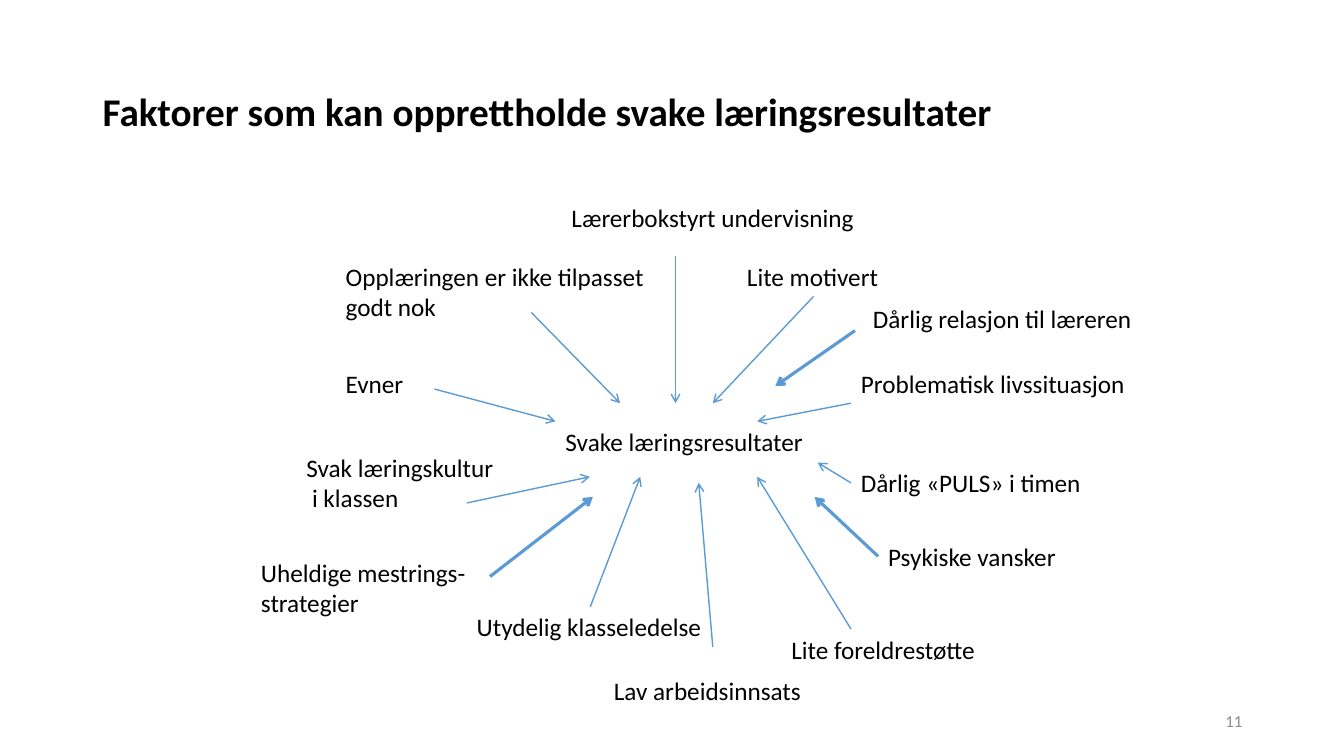
from dataclasses import dataclass

from lxml.etree import SubElement as Sub
from pptx import Presentation
from pptx.dml.color import RGBColor as Rgb
from pptx.enum.shapes import MSO_CONNECTOR as Conn
from pptx.enum.text import MSO_ANCHOR as Anchor, MSO_AUTO_SIZE as Fit, PP_ALIGN as Align
from pptx.oxml.ns import qn
from pptx.shapes.autoshape import Shape
from pptx.slide import Slide
from pptx.util import Inches, Pt

COLORS = {"text": "000000", "arrow": "5B9BD5", "number": "8C8C8C"}
FONT = "Calibri"
TOP, LEFT, BOTTOM = 0, 1, 2  # connection sites
THIN, THICK = 1, 2.25


@dataclass
class Label:
    lines: list[str]
    x: float
    y: float
    w: float
    h: float = 0.4
    size: float = 18
    color: str = "text"
    bold: bool = False
    wrap: bool = False
    grow: bool = True
    anchor: Anchor = Anchor.TOP
    align: Align = Align.LEFT
    space: float = 1


@dataclass
class Arrow:
    start: tuple[float, float]
    end: tuple[float, float]
    width: float = THIN
    site: int | None = None  # side of the label where the arrow begins


@dataclass
class Factor:
    label: Label
    arrow: Arrow


TITLE = Label(["Faktorer som kan opprettholde svake læringsresultater"],
              0.92, 0.4, 11.5, 1.45, size=28, bold=True, wrap=True,
              grow=False, anchor=Anchor.MIDDLE, space=0.9)
CENTER = Label(["Svake læringsresultater"], 5.51, 4.18, 2.61)
NUMBER = Label(["11"], 9.42, 6.95, 3, size=12, color="number", wrap=True,
               grow=False, anchor=Anchor.MIDDLE, align=Align.RIGHT)

# Factors, clockwise from the top
FACTORS = [
    Factor(Label(["Lærerbokstyrt undervisning"], 5.57, 1.96, 3.03),
           Arrow((6.7, 2.54), (6.7, 4))),
    Factor(Label(["Lite motivert"], 7.31, 2.54, 1.52),
           Arrow((8.07, 2.94), (7.07, 4), site=BOTTOM)),
    Factor(Label(["Dårlig relasjon til læreren"], 8.56, 2.96, 2.8),
           Arrow((8.48, 3.28), (7.69, 3.83), THICK)),
    Factor(Label(["Problematisk livssituasjon"], 8.44, 3.6, 2.85, 0.71),
           Arrow((8.44, 4), (7.51, 4.18))),
    Factor(Label(["Dårlig «PULS» i timen"], 8.44, 4.59, 2.47),
           Arrow((8.44, 4.79), (8.11, 4.59), site=LEFT)),
    Factor(Label(["Psykiske vansker"], 8.71, 5.32, 1.88),
           Arrow((8.71, 5.53), (8.08, 4.93), THICK, LEFT)),
    Factor(Label(["Lite foreldrestøtte"], 7.75, 6.24, 2.06),
           Arrow((8.44, 6.24), (7.51, 4.73))),
    Factor(Label(["Lav arbeidsinnsats"], 5.99, 6.65, 2.08),
           Arrow((7.07, 6.42), (6.93, 4.79))),
    Factor(Label(["Utydelig klasseledelse"], 4.63, 6.02, 2.45),
           Arrow((5.85, 6.02), (6.35, 4.73), site=TOP)),
    Factor(Label(["Uheldige mestrings- strategier"], 2.49, 5.48, 2.6, 0.71, wrap=True),
           Arrow((4.86, 5.72), (5.88, 4.93), THICK)),
    Factor(Label(["Svak læringskultur", " i klassen"], 2.94, 4.44, 2.08, 0.71),
           Arrow((4.63, 4.99), (5.85, 4.73))),
    Factor(Label(["Evner"], 3.33, 3.6, 0.84),
           Arrow((4.31, 3.86), (5.51, 4.18))),
    Factor(Label(["Opplæringen er ikke tilpasset", "godt nok"], 3.33, 2.54, 3.2, 0.71),
           Arrow((5.27, 3.1), (6.15, 4))),
]


def add_label(slide: Slide, label: Label) -> Shape:
    box = slide.shapes.add_textbox(Inches(label.x), Inches(label.y),
                                   Inches(label.w), Inches(label.h))
    frame = box.text_frame
    frame.word_wrap = label.wrap
    frame.auto_size = Fit.SHAPE_TO_FIT_TEXT if label.grow else Fit.NONE
    frame.vertical_anchor = label.anchor
    for i, line in enumerate(label.lines):
        para = frame.add_paragraph() if i else frame.paragraphs[0]
        para.alignment = label.align
        para.line_spacing = label.space
        run = para.add_run()
        run.text = line
        run.font.name = FONT
        run.font.size = Pt(label.size)
        run.font.bold = label.bold
        run.font.color.rgb = Rgb.from_string(COLORS[label.color])
    return box


def add_arrow(slide: Slide, arrow: Arrow, box: Shape) -> None:
    ends = [Inches(v) for v in (*arrow.start, *arrow.end)]
    line = slide.shapes.add_connector(Conn.STRAIGHT, *ends)
    if arrow.site is not None:
        line.begin_connect(box, arrow.site)
    line.line.width = Pt(arrow.width)
    line.line.color.rgb = Rgb.from_string(COLORS["arrow"])
    # Arrowhead, and no shadow
    Sub(line.line._get_or_add_ln(), qn("a:tailEnd"), type="arrow")
    Sub(line._element.spPr, qn("a:effectLst"))


def main() -> None:
    deck = Presentation()
    deck.slide_width, deck.slide_height = Inches(13.33), Inches(7.5)
    slide = deck.slides.add_slide(deck.slide_layouts[6])
    for label in (TITLE, CENTER, NUMBER):
        add_label(slide, label)
    for factor in FACTORS:
        box = add_label(slide, factor.label)
        add_arrow(slide, factor.arrow, box)
    deck.save("out.pptx")


if __name__ == "__main__":
    main()
